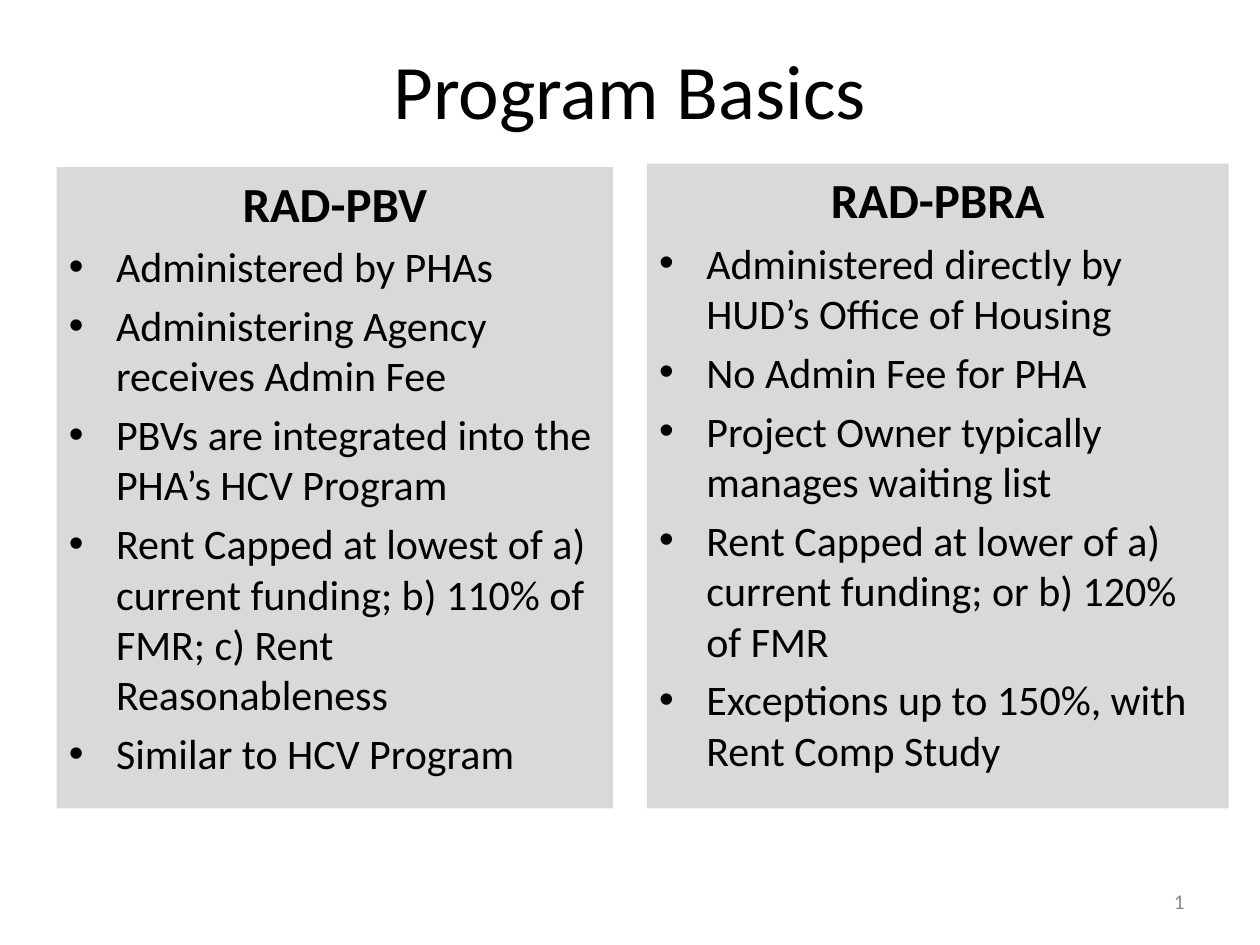
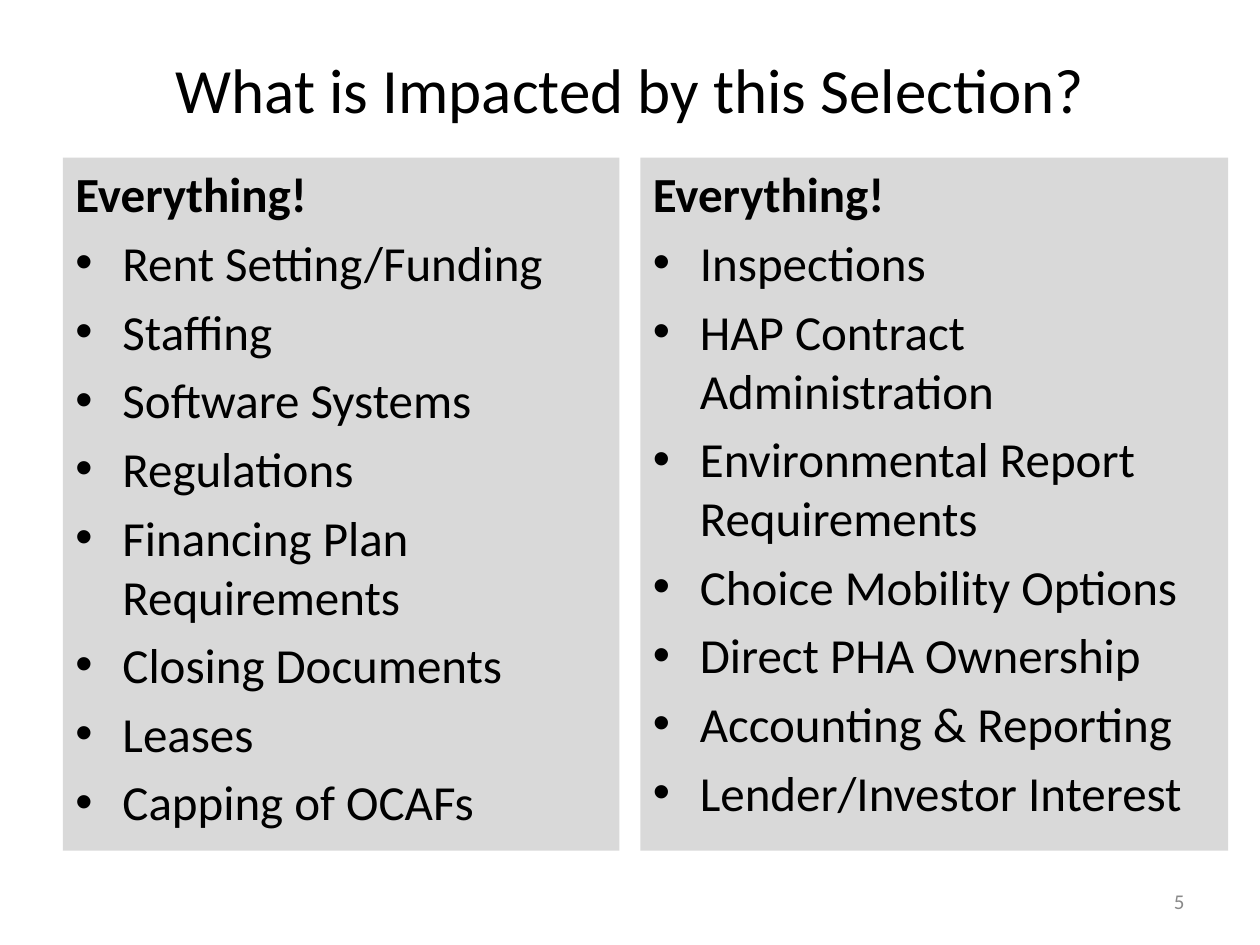
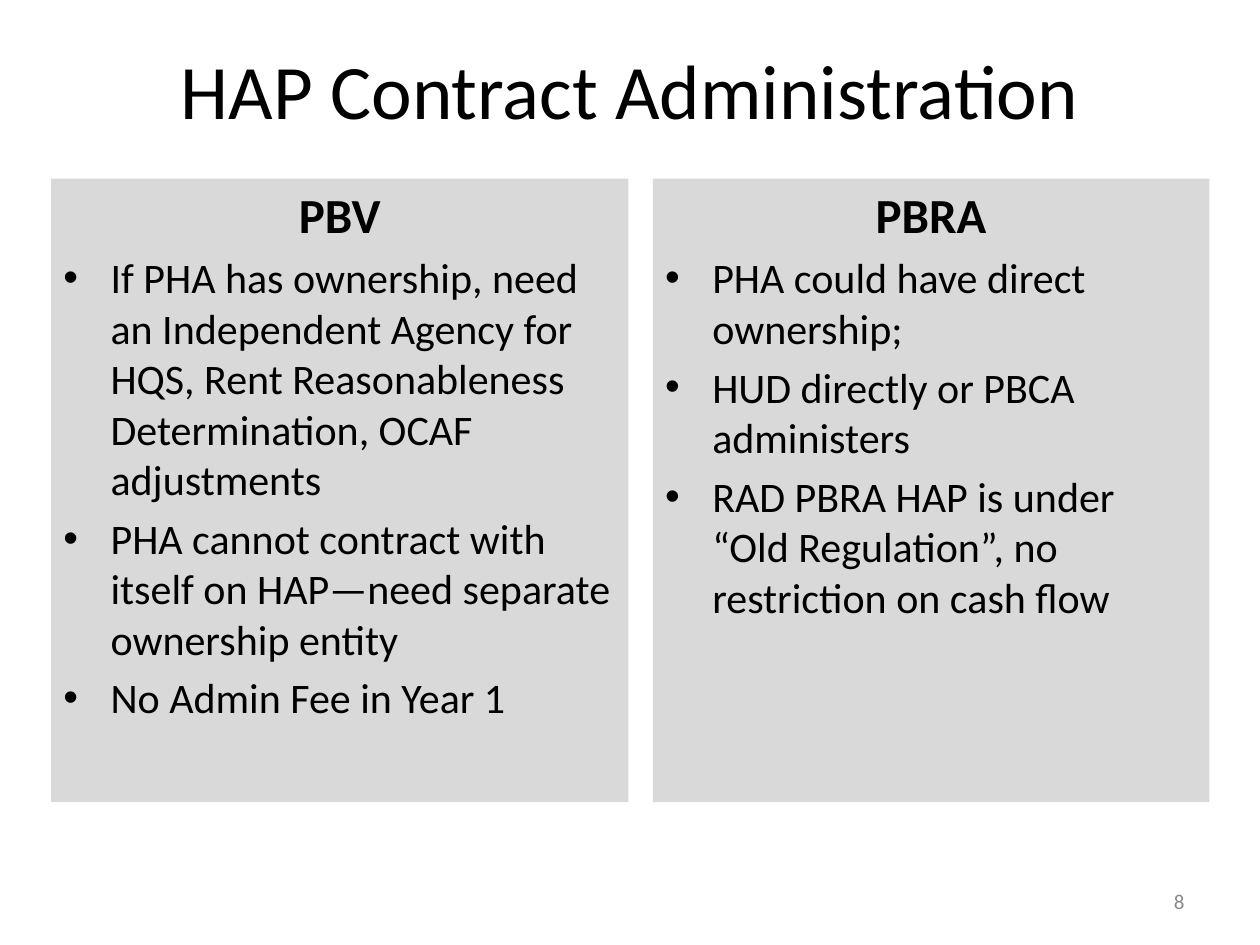
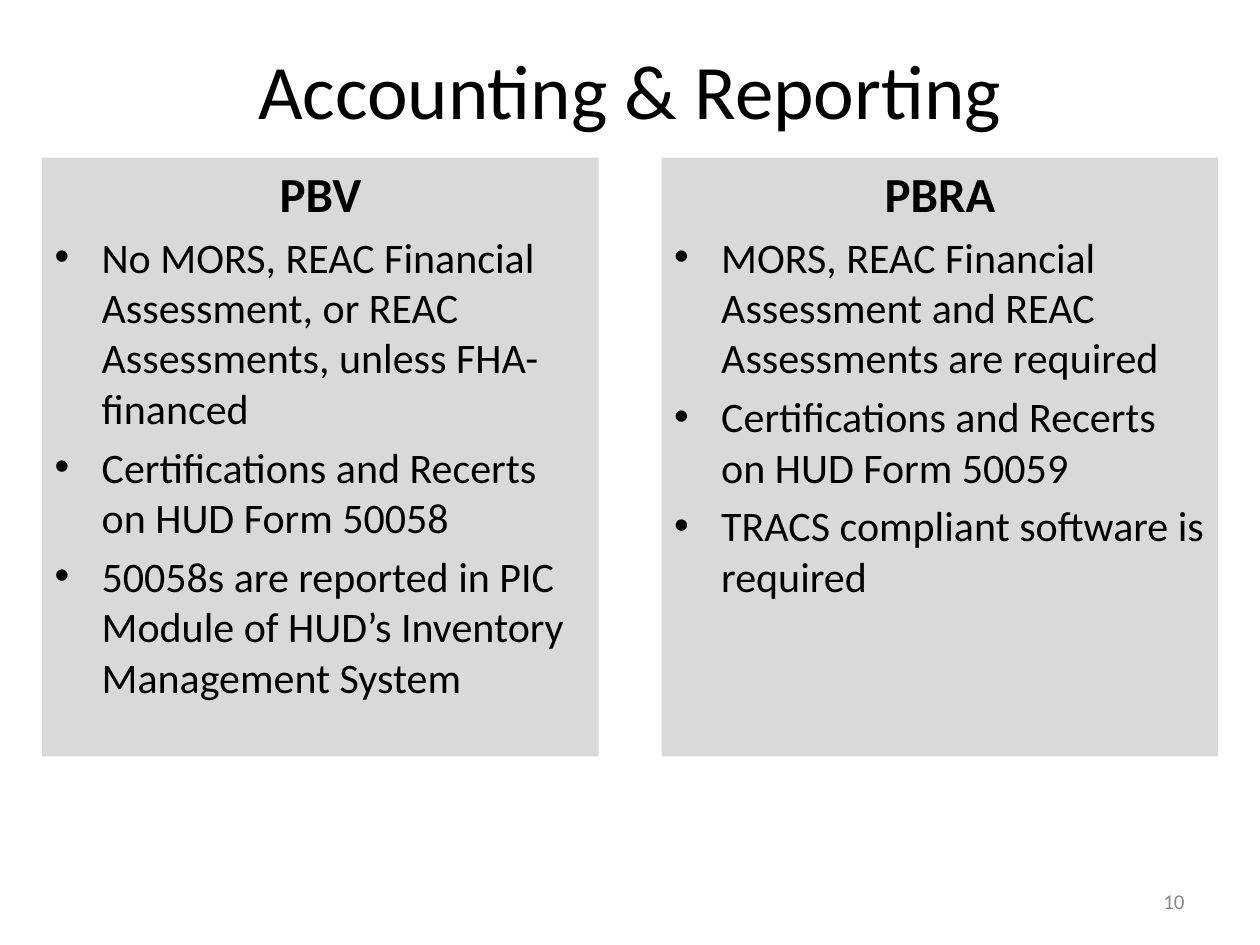
from lxml import etree
from pptx import Presentation
from pptx.dml.color import RGBColor
from pptx.enum.shapes import MSO_SHAPE
from pptx.enum.text import MSO_ANCHOR, MSO_AUTO_SIZE, PP_ALIGN
from pptx.oxml.ns import qn
from pptx.util import Cm, Pt

RECTANGLE = MSO_SHAPE.RECTANGLE
TOP, MIDDLE = MSO_ANCHOR.TOP, MSO_ANCHOR.MIDDLE
LEFT, CENTER, RIGHT = PP_ALIGN.LEFT, PP_ALIGN.CENTER, PP_ALIGN.RIGHT
NO_FIT = MSO_AUTO_SIZE.NONE

BLACK = RGBColor(0x00, 0x00, 0x00)
PANEL_GRAY = RGBColor(0xD9, 0xD9, 0xD9)
NUMBER_GRAY = RGBColor(0x89, 0x89, 0x89)
FONT_NAME = "Calibri"

TITLE_ONLY = 5
TITLE_BOX = (1.27, 0.2, 22.86, 3.18)
NUMBER_BOX = (18.21, 17.65, 5.92, 1.02)
BULLET_INDENT = Cm(0.95)
HEADING_SIZE = 28

# Boxes are (left, top, width, height) in centimetres.
PAGES = [
    {
        "title": "Program Basics", "number": 1,
        "panels": [
            ((1.14, 3.37, 11.22, 12.93), "RAD-PBV", [
                "Administered by PHAs",
                "Administering Agency receives Admin Fee",
                "PBVs are integrated into the PHA’s HCV Program",
                "Rent Capped at lowest of a) current funding; b) 110% of FMR; "
                "c) Rent Reasonableness",
                "Similar to HCV Program",
            ]),
            ((13.04, 3.3, 11.73, 13), "RAD-PBRA", [
                "Administered directly by HUD’s Office of Housing",
                "No Admin Fee for PHA",
                "Project Owner typically manages waiting list",
                "Rent Capped at lower of a) current funding; or b) 120% of FMR",
                "Exceptions up to 150%, with Rent Comp Study",
            ]),
        ],
    },
    {
        "title": "What is Impacted by this Selection?", "number": 5,
        "title_size": 36, "heading_align": LEFT, "bullet_size": 28,
        "panels": [
            ((1.27, 3.18, 11.22, 13.97), "Everything!", [
                "Rent Setting/Funding",
                "Staffing",
                "Software Systems",
                "Regulations",
                "Financing Plan Requirements",
                "Closing Documents",
                "Leases",
                "Capping of OCAFs",
            ]),
            ((12.91, 3.18, 11.85, 13.97), "Everything!", [
                "Inspections",
                "HAP Contract Administration",
                "Environmental Report Requirements",
                "Choice Mobility Options",
                "Direct PHA Ownership",
                "Accounting & Reporting",
                "Lender/Investor Interest",
            ]),
        ],
    },
    {
        "title": "HAP Contract Administration", "number": 8,
        "panels": [
            ((1.03, 3.6, 11.64, 12.57), "PBV", [
                "If PHA has ownership, need an Independent Agency for HQS, "
                "Rent Reasonableness Determination, OCAF adjustments",
                "PHA cannot contract with itself on HAP—need separate "
                "ownership entity",
                "No Admin Fee in Year 1",
            ]),
            ((13.16, 3.6, 11.22, 12.57), "PBRA", [
                "PHA could have direct ownership;",
                "HUD directly or PBCA administers",
                "RAD PBRA HAP is under “Old Regulation”, no restriction "
                "on cash flow",
            ]),
        ],
    },
    {
        "title": "Accounting & Reporting", "number": 10,
        "panels": [
            ((0.85, 3.18, 11.22, 12.07), "PBV", [
                "No MORS, REAC Financial Assessment, or REAC Assessments, "
                "unless FHA-financed",
                "Certifications and Recerts on HUD Form 50058",
                "50058s are reported in PIC Module of HUD’s Inventory "
                "Management System",
            ]),
            ((13.34, 3.18, 11.22, 12.07), "PBRA", [
                "MORS, REAC Financial Assessment and REAC Assessments "
                "are required",
                "Certifications and Recerts on HUD Form 50059",
                "TRACS compliant software is required",
            ]),
        ],
    },
]


def set_attributes(target, values):
    for name, value in values.items():
        setattr(target, name, value)


def place(shape, box):
    names = ("left", "top", "width", "height")
    set_attributes(shape, dict(zip(names, map(Cm, box))))


def set_frame(frame, anchor):
    set_attributes(frame, {
        "word_wrap": True, "auto_size": NO_FIT, "vertical_anchor": anchor})


def write(para, text, size, align=LEFT, color=BLACK, bold=False):
    para.alignment = align
    span = para.add_run()
    span.text = text
    set_attributes(span.font, {
        "name": FONT_NAME, "size": Pt(size), "bold": bold})
    span.font.color.rgb = color


def add_bullet(para):
    properties = para._p.get_or_add_pPr()
    properties.set("marL", str(BULLET_INDENT))
    properties.set("indent", str(-BULLET_INDENT))
    etree.SubElement(properties, qn("a:buFont")).set("typeface", "Arial")
    etree.SubElement(properties, qn("a:buChar")).set("char", "•")


def add_title(page, text, size):
    title = page.shapes.title
    place(title, TITLE_BOX)
    set_frame(title.text_frame, MIDDLE)
    write(title.text_frame.paragraphs[0], text, size, CENTER)


def add_panel(page, box, heading, bullets, heading_align, bullet_size):
    panel = page.shapes.add_shape(RECTANGLE, *map(Cm, box))
    panel.shadow.inherit = False
    panel.fill.solid()
    panel.fill.fore_color.rgb = PANEL_GRAY
    panel.line.fill.background()
    frame = panel.text_frame
    set_frame(frame, TOP)
    write(frame.paragraphs[0], heading, HEADING_SIZE, heading_align, bold=True)
    for bullet in bullets:
        para = frame.add_paragraph()
        add_bullet(para)
        para.space_before = Pt(bullet_size * 0.2)
        write(para, bullet, bullet_size)


def add_page_number(page, number):
    box = page.shapes.add_textbox(*map(Cm, NUMBER_BOX))
    set_frame(box.text_frame, MIDDLE)
    write(box.text_frame.paragraphs[0], str(number), 12, RIGHT, NUMBER_GRAY)


def add_comparison_page(deck, content):
    page = deck.slides.add_slide(deck.slide_layouts[TITLE_ONLY])
    add_title(page, content["title"], content.get("title_size", 44))
    for box, heading, bullets in content["panels"]:
        add_panel(page, box, heading, bullets,
                  content.get("heading_align", CENTER),
                  content.get("bullet_size", 24))
    add_page_number(page, content["number"])


def main():
    deck = Presentation()
    set_attributes(deck, {"slide_width": Cm(25.4), "slide_height": Cm(19.05)})
    for content in PAGES:
        add_comparison_page(deck, content)
    deck.save("out.pptx")


if __name__ == "__main__":
    main()
